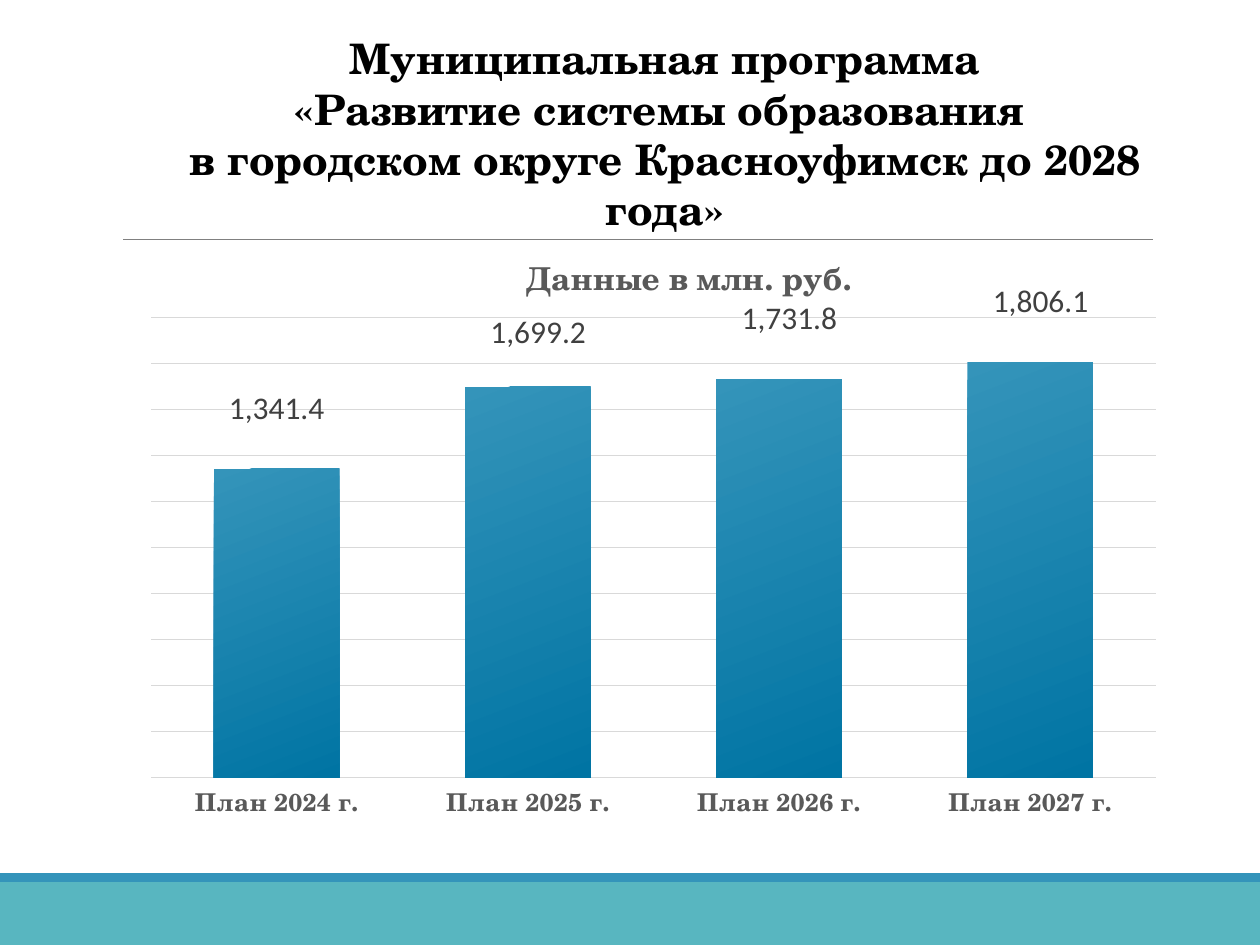
from dataclasses import dataclass

from pptx import Presentation
from pptx.chart.data import CategoryChartData
from pptx.dml.color import RGBColor
from pptx.enum.chart import XL_CHART_TYPE, XL_LABEL_POSITION, XL_TICK_LABEL_POSITION, XL_TICK_MARK
from pptx.enum.shapes import MSO_CONNECTOR, MSO_SHAPE
from pptx.enum.text import PP_ALIGN
from pptx.oxml import parse_xml
from pptx.oxml.ns import nsdecls, qn
from pptx.util import Inches, Pt

COLUMN = XL_CHART_TYPE.COLUMN_CLUSTERED
OUTSIDE = XL_LABEL_POSITION.OUTSIDE_END
NEXT = XL_TICK_LABEL_POSITION.NEXT_TO_AXIS
NO_TICK = XL_TICK_MARK.NONE
LINE = MSO_CONNECTOR.STRAIGHT
RECT = MSO_SHAPE.RECTANGLE
CENTER = PP_ALIGN.CENTER


@dataclass(frozen=True)
class Theme:
    face: str = "TeX Gyre Schola"
    sans: str = "Calibri"
    black: str = "000000"
    text: str = "595959"
    label: str = "404040"
    grid: str = "D9D9D9"
    rule: str = "808080"
    teal: str = "58B6C0"
    blue: str = "3494BA"
    deep: str = "0074A3"
    head: int = 24
    sub: int = 18
    axis: int = 14
    base: int = 10


def rgb(code):
    return RGBColor.from_string(code)


def style(font, size, color, bold=False, face=None):
    font.size, font.bold = Pt(size), bold
    font.color.rgb = rgb(color)
    if face:
        font.name = face


def write(para, text, align=None, **form):
    run = para.add_run()
    run.text = text
    para.alignment = align
    style(run.font, **form)


def place(node, index, x, y, size=None, edge=False):
    """Give a chart part a manual layout, in shares of the chart."""
    for old in node.findall(qn("c:layout")):
        node.remove(old)
    marks = {"layoutTarget": "inner"} if size else {}
    if edge:
        marks.update(xMode="edge", yMode="edge")
    marks.update(x=x, y=y)
    if size:
        marks.update(w=size[0], h=size[1])
    body = "".join(f'<c:{key} val="{val}"/>' for key, val in marks.items())
    node.insert(index, parse_xml(
        f'<c:layout {nsdecls("c")}><c:manualLayout>{body}</c:manualLayout></c:layout>'))


def hide_leaders(node):
    """Turn off the lines between moved labels and their columns."""
    for old in node.findall(qn("c:showLeaderLines")):
        node.remove(old)
    node.append(parse_xml(f'<c:showLeaderLines {nsdecls("c")} val="0"/>'))
    node.append(parse_xml(
        f'<c:extLst {nsdecls("c")}><c:ext uri="{{CE6537A1-D6FC-4f65-9D91-7224C49458BB}}" '
        'xmlns:c15="http://schemas.microsoft.com/office/drawing/2012/chart">'
        '<c15:showLeaderLines val="0"/></c:ext></c:extLst>'))


class Deck:
    def __init__(self, theme):
        self.theme = theme
        self.show = Presentation()
        self.show.slide_width, self.show.slide_height = Inches(10), Inches(7.5)
        self.slide = self.show.slides.add_slide(self.show.slide_layouts[6])

    def band(self, top, height, color):
        shape = self.slide.shapes.add_shape(
            RECT, 0, Inches(top), self.show.slide_width, Inches(height))
        shape.shadow.inherit = False
        shape.fill.solid()
        shape.fill.fore_color.rgb = rgb(color)
        shape.line.fill.background()

    def rule(self, left, right, y):
        line = self.slide.shapes.add_connector(
            LINE, Inches(left), Inches(y), Inches(right), Inches(y))
        line.line.color.rgb = rgb(self.theme.rule)
        line.line.width = Pt(0.5)
        line._element.spPr.append(parse_xml(f'<a:effectLst {nsdecls("a")}/>'))

    def title(self, box, lines):
        t = self.theme
        frame = self.slide.shapes.add_textbox(*map(Inches, box)).text_frame
        frame.word_wrap = True
        for i, text in enumerate(lines):
            para = frame.add_paragraph() if i else frame.paragraphs[0]
            write(para, text, CENTER, size=t.head, color=t.black, bold=True, face=t.face)

    def chart(self, box, title, data, shifts):
        t = self.theme
        source = CategoryChartData()
        source.categories = list(data)
        source.add_series("Series 1", list(data.values()))
        chart = self.slide.shapes.add_chart(COLUMN, *map(Inches, box), source).chart
        chart.has_legend = False
        style(chart.font, t.base, t.black, face=t.face)

        # Chart title and plot area
        write(chart.chart_title.text_frame.paragraphs[0], title,
              size=t.sub, color=t.text, bold=True, face=t.face)
        place(chart.chart_title._element, 1, 0.39, 0, edge=True)
        place(chart._chartSpace.chart.plotArea, 0, 0.035, 0.119, (0.965, 0.748), edge=True)

        # Axes
        cats, vals = chart.category_axis, chart.value_axis
        cats.major_tick_mark = cats.minor_tick_mark = NO_TICK
        cats.tick_label_position = NEXT
        cats.format.line.color.rgb = rgb(t.grid)
        cats.format.line.width = Pt(1)
        style(cats.tick_labels.font, t.axis, t.text, True, t.face)
        vals.visible = False
        vals.minimum_scale, vals.maximum_scale, vals.major_unit = 0, 2000, 200
        vals.has_major_gridlines = True
        grid = vals.major_gridlines.format.line
        grid.color.rgb, grid.width = rgb(t.grid), Pt(0.75)

        # Columns
        plot = chart.plots[0]
        plot.gap_width, plot.overlap, plot.vary_by_categories = 100, -24, False
        series = plot.series[0]
        fill = series.format.fill
        fill.gradient()
        fill.gradient_angle = 360 - 69
        for stop, color in zip(fill.gradient_stops, (t.blue, t.deep)):
            stop.color.rgb = rgb(color)

        # Value labels, lifted above the columns
        labels = series.data_labels
        labels.show_value = True
        labels.number_format, labels.number_format_is_linked = "#,##0.0", False
        labels.position = OUTSIDE
        style(labels.font, t.sub, t.label, face=t.sans)
        for i, (value, shift) in enumerate(zip(data.values(), shifts)):
            label = series.points[i].data_label
            write(label.text_frame.paragraphs[0], f"{value:,.1f}",
                  size=t.sub, color=t.label, face=t.sans)
            label.position = OUTSIDE
            place(label._get_or_add_dLbl(), 1, *shift)
        hide_leaders(labels._element)


def main():
    theme = Theme()
    deck = Deck(theme)

    # Frame of the slide
    deck.rule(0.98, 9.15, 1.9)
    deck.band(7, 0.5, theme.teal)
    deck.band(6.93, 0.07, theme.blue)

    # Heading
    deck.title((1.38, 0.21, 7.8, 1.31), [
        "Муниципальная программа",
        "«Развитие системы образования ",
        "в городском округе Красноуфимск до 2028 года»",
    ])

    # Spending by year
    plan = {2024: 1341.4, 2025: 1699.2, 2026: 1731.8, 2027: 1806.1}
    deck.chart((0.91, 1.94, 8.27, 4.88), "Данные в млн. руб.",
               {f"План {year} г.": value for year, value in plan.items()},
               [(0, -0.06), (0.01, -0.05), (0.01, -0.06), (0.01, -0.06)])

    deck.show.save("out.pptx")


if __name__ == "__main__":
    main()
